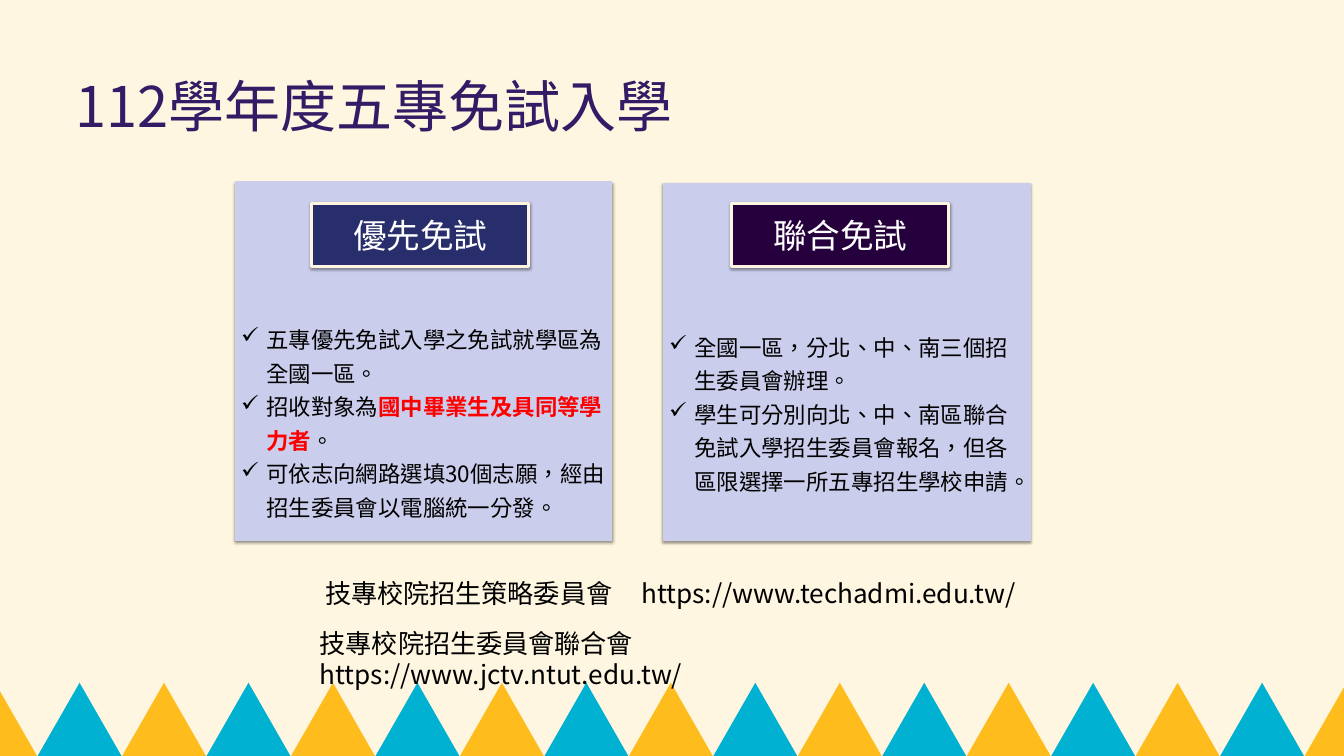
from dataclasses import dataclass

from lxml import etree
from pptx import Presentation
from pptx.dml.color import RGBColor
from pptx.enum.shapes import MSO_SHAPE
from pptx.enum.text import MSO_ANCHOR, PP_ALIGN
from pptx.oxml.ns import qn
from pptx.util import Pt

PROCESS = MSO_SHAPE.FLOWCHART_PROCESS
TRIANGLE = MSO_SHAPE.ISOSCELES_TRIANGLE
MIDDLE = MSO_ANCHOR.MIDDLE
CENTER = PP_ALIGN.CENTER

CREAM = RGBColor(0xFE, 0xF6, 0xE0)
PURPLE = RGBColor(0x35, 0x1B, 0x65)
LAVENDER = RGBColor(0xCA, 0xCD, 0xEB)
NAVY = RGBColor(0x28, 0x2D, 0x6C)
PLUM = RGBColor(0x25, 0x00, 0x3C)
YELLOW = RGBColor(0xFE, 0xBC, 0x1D)
CYAN = RGBColor(0x00, 0xB1, 0xD2)
BLACK = RGBColor(0, 0, 0)
WHITE = RGBColor(255, 255, 255)
RED = RGBColor(255, 0, 0)

FONT = "Noto Sans CJK SC"
INDENT = Pt(27)
TRIANGLE_COUNT = 17
TRIANGLE_WIDTH = 90.5


@dataclass
class Panel:
    left: float
    top: float
    width: float
    height: float
    text_inset: float
    label: str
    label_left: float
    label_color: RGBColor
    items: list[list[str]]


@dataclass
class Label:
    text: str
    left: float
    top: float
    width: float
    height: float
    size: float
    color: RGBColor
    line_height: float
    inset: bool


PANELS = [
    Panel(251.3, 194.4, 404.6, 385.2, 130, "優先免試", 334, NAVY, [
        ["五專優先免試入學之免試就學區為全國一區。"],
        ["招收對象為", "國中畢業生及具同等學力者", "。"],
        ["可依志向網路選填30個志願，經由招生委員會以電腦統一分發。"],
    ]),
    Panel(709.9, 195.8, 394.6, 383.8, 109, "聯合免試", 784, PLUM, [
        ["全國一區，分北、中、南三個招生委員會辦理。"],
        ["學生可分別向北、中、南區聯合免試入學招生委員會報名，但各區限選擇一所五專招生學校申請。"],
    ]),
]
TITLE = Label("112學年度五專免試入學", 80.6, 63, 1150, 87, 60, PURPLE, 86, False)
LINKS = [
    Label("技專校院招生策略委員會\thttps://www.techadmi.edu.tw/",
          341.3, 615, 756.7, 41, 28, BLACK, 34, True),
    Label("技專校院招生委員會聯合會\vhttps://www.jctv.ntut.edu.tw/",
          335.5, 668, 768.2, 75, 28, BLACK, 34, True),
]


def style_span(span, size: float, color: RGBColor, bold: bool = False) -> None:
    span.font.size = Pt(size)
    span.font.name = FONT
    span.font.color.rgb = color
    span.font.bold = bold
    properties = span._r.get_or_add_rPr()
    properties.set("lang", "zh-TW")
    latin = properties.find(qn("a:latin"))
    east_asian = etree.Element(qn("a:ea"), typeface=FONT)
    latin.addnext(east_asian)


def add_filled(page, kind, left: float, top: float, width: float,
               height: float, color: RGBColor):
    shape = page.shapes.add_shape(kind, Pt(left), Pt(top), Pt(width), Pt(height))
    shape.fill.solid()
    shape.fill.fore_color.rgb = color
    shape.line.fill.background()
    shape.shadow.inherit = False
    return shape


def add_shadow(shape) -> None:
    effects = shape._element.spPr.find(qn("a:effectLst"))
    shadow = etree.SubElement(effects, qn("a:outerShdw"), blurRad=str(Pt(3.1)),
                              dist=str(Pt(1.6)), dir="5400000", rotWithShape="0")
    color = etree.SubElement(shadow, qn("a:srgbClr"), val=str(BLACK))
    etree.SubElement(color, qn("a:alpha"), val="38000")


def add_bullet(para) -> None:
    properties = para._p.get_or_add_pPr()
    properties.set("marL", str(INDENT))
    properties.set("indent", str(-INDENT))
    color = etree.SubElement(properties, qn("a:buClr"))
    etree.SubElement(color, qn("a:srgbClr"), val=str(BLACK))
    etree.SubElement(properties, qn("a:buChar"), char="✓")


def add_label(page, label: Label) -> None:
    box = page.shapes.add_textbox(Pt(label.left), Pt(label.top),
                                  Pt(label.width), Pt(label.height))
    frame = box.text_frame
    frame.word_wrap = True
    if not label.inset:
        frame.margin_left = frame.margin_right = Pt(0)
        frame.margin_top = frame.margin_bottom = Pt(0)
    para = frame.paragraphs[0]
    para.text = label.text
    para.line_spacing = Pt(label.line_height)
    for span in para.runs:
        style_span(span, label.size, label.color)
    if "\t" in label.text:
        stops = etree.SubElement(para._p.get_or_add_pPr(), qn("a:tabLst"))
        etree.SubElement(stops, qn("a:tab"), pos=str(Pt(339)), algn="l")


def add_panel(page, panel: Panel) -> None:
    card = add_filled(page, PROCESS, panel.left, panel.top, panel.width,
                      panel.height, LAVENDER)
    add_shadow(card)
    frame = card.text_frame
    frame.word_wrap = True
    frame.vertical_anchor = MIDDLE
    frame.margin_top = Pt(panel.text_inset)
    frame.text = "\n".join("".join(item) for item in panel.items)
    for para, parts in zip(frame.paragraphs, panel.items):
        para.text = parts[0]
        para.alignment = PP_ALIGN.LEFT
        para.line_spacing = Pt(36)
        add_bullet(para)
        for part in parts[1:]:
            para.add_run().text = part
        for index, span in enumerate(para.runs):
            marked = index == 1
            style_span(span, 24, RED if marked else BLACK, marked)

    button = add_filled(page, PROCESS, panel.label_left, 218.2, 232.6, 67.7,
                        panel.label_color)
    button.line.color.rgb = CREAM
    button.line.width = Pt(3)
    add_shadow(button)
    button.text_frame.text = panel.label
    button.text_frame.vertical_anchor = MIDDLE
    para = button.text_frame.paragraphs[0]
    para.alignment = CENTER
    style_span(para.runs[0], 36, WHITE)


def add_triangles(page) -> None:
    for index in range(TRIANGLE_COUNT):
        add_filled(page, TRIANGLE, -50.5 + index * TRIANGLE_WIDTH, 731.5,
                   TRIANGLE_WIDTH, 79, CYAN if index % 2 else YELLOW)


def main() -> None:
    deck = Presentation()
    deck.slide_width, deck.slide_height = Pt(1440), Pt(810)
    page = deck.slides.add_slide(deck.slide_layouts[6])
    page.background.fill.solid()
    page.background.fill.fore_color.rgb = CREAM
    add_label(page, TITLE)
    add_triangles(page)
    for panel in PANELS:
        add_panel(page, panel)
    for link in LINKS:
        add_label(page, link)
    deck.save("out.pptx")


if __name__ == "__main__":
    main()
